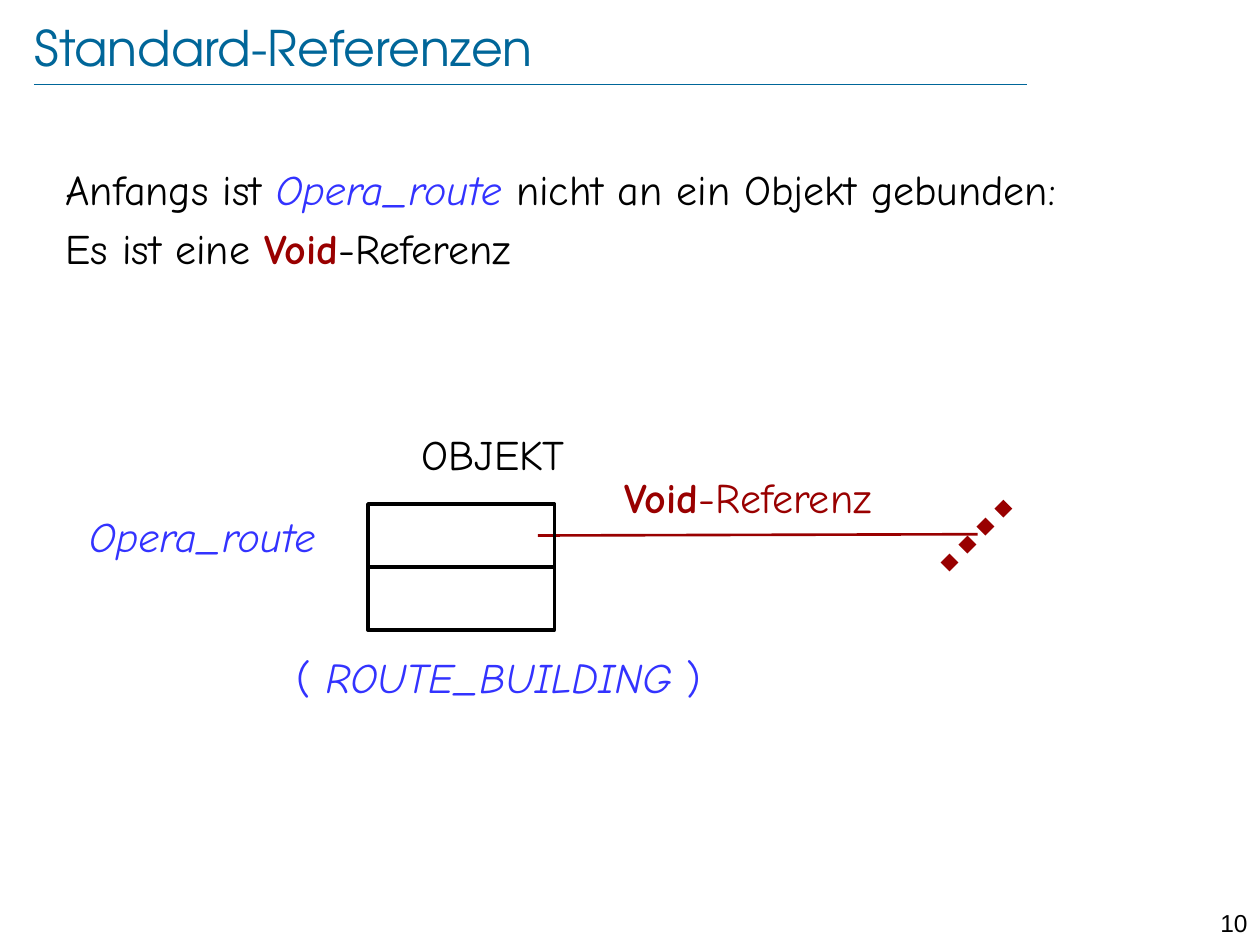
from lxml import etree
from pptx import Presentation
from pptx.dml.color import RGBColor
from pptx.enum.dml import MSO_LINE
from pptx.enum.shapes import MSO_CONNECTOR, MSO_SHAPE
from pptx.enum.text import MSO_ANCHOR, MSO_AUTO_SIZE, PP_ALIGN
from pptx.oxml.ns import qn
from pptx.util import Pt

STRAIGHT = MSO_CONNECTOR.STRAIGHT
RECTANGLE = MSO_SHAPE.RECTANGLE
DOTTED = MSO_LINE.ROUND_DOT
MIDDLE = MSO_ANCHOR.MIDDLE
NO_FIT = MSO_AUTO_SIZE.NONE
LEFT, CENTER, RIGHT = PP_ALIGN.LEFT, PP_ALIGN.CENTER, PP_ALIGN.RIGHT

PX = 9144  # EMU per px, 100 px to the inch
COLORS = {"title": "006699", "text": "000000", "code": "3333FF", "void": "990000"}
TITLE_FONT, BODY_FONT, NUMBER_FONT = "TeX Gyre Adventor", "Comic Neue", "Arial"


def add_spans(para, spans, font=BODY_FONT, size=24):
    """Fill a paragraph with spans of (text, color name, style attributes)."""
    for text, color, *styles in spans:
        span = para.add_run()
        span.text = text
        formats = {"name": font, "size": Pt(size), "bold": False, "italic": False}
        formats.update({style: True for style in styles})
        for name, value in formats.items():
            setattr(span.font, name, value)
        span.font.color.rgb = RGBColor.from_string(COLORS[color])


def place(shape, left, top, width, height):
    shape.left, shape.top = left * PX, top * PX
    shape.width, shape.height = width * PX, height * PX


deck = Presentation()
deck.slide_width, deck.slide_height = 1000 * PX, 750 * PX
page = deck.slides.add_slide(deck.slide_layouts[1])

# Title
title = page.shapes.title
place(title, 27, 13, 869, 48)
frame = title.text_frame
title_format = {
    "margin_left": 0, "margin_top": 0, "margin_right": 0, "margin_bottom": 0,
    "vertical_anchor": MIDDLE, "auto_size": NO_FIT,
}
for name, value in title_format.items():
    setattr(frame, name, value)
frame.paragraphs[0].alignment = LEFT
add_spans(frame.paragraphs[0], [("Standard-Referenzen", "title")], TITLE_FONT, 28)

# Body
body = page.placeholders[1]
place(body, 42, 125, 932, 559)
body.text_frame.auto_size = NO_FIT
body_lines = [
    [("Anfangs ist ", "text"), ("Opera_route ", "code", "italic"),
     ("nicht an ein Objekt gebunden:", "text")],
    [("Es ist eine ", "text"), ("Void", "void", "bold"), ("-Referenz", "text")],
]
for index, spans in enumerate(body_lines):
    para = body.text_frame.add_paragraph() if index else body.text_frame.paragraphs[0]
    para.space_before = Pt(5 if index else 0)
    properties = para._p.get_or_add_pPr()
    properties.set("marL", "0")
    properties.set("indent", "0")
    etree.SubElement(properties, qn("a:buNone"))
    add_spans(para, spans)

# Title rule, void reference and its dotted end
lines = [
    (27, 67, 815, 67, "title", 0.25, None),
    (427, 425, 776, 424, "void", 1.5, None),
    (750, 450, 800, 400, "void", 7.25, DOTTED),
]
for x1, y1, x2, y2, color, weight, dash in lines:
    line = page.shapes.add_connector(STRAIGHT, x1 * PX, y1 * PX, x2 * PX, y2 * PX)
    line.line.color.rgb = RGBColor.from_string(COLORS[color])
    line.line.width = Pt(weight)
    if dash:
        line.line.dash_style = dash
    etree.SubElement(line._element.spPr, qn("a:effectLst"))

# Object with two fields
for row in range(2):
    field = page.shapes.add_shape(RECTANGLE, 292 * PX, (400 + 50 * row) * PX, 148 * PX, 50 * PX)
    field.shadow.inherit = False
    field.fill.background()
    field.line.color.rgb = RGBColor.from_string(COLORS["text"])
    field.line.width = Pt(2)

# Labels and page number
labels = [
    ((325, 335, 533, 50), LEFT, [("OBJEKT", "text")], BODY_FONT, 24),
    ((61, 400, 231, 50), LEFT, [("Opera_route", "code", "italic")], BODY_FONT, 24),
    ((486, 369, 262, 50), LEFT,
     [("Void", "void", "bold"), ("-Referenz", "void")], BODY_FONT, 24),
    ((151, 512, 490, 50), CENTER,
     [("( ", "code"), ("ROUTE_BUILDING ", "code", "italic"), (")", "code")], BODY_FONT, 24),
    ((945, 716, 55, 24), RIGHT, [("10", "text")], NUMBER_FONT, 14),
]
for area, alignment, spans, font, size in labels:
    box = page.shapes.add_textbox(*(length * PX for length in area))
    box.text_frame.word_wrap = True
    para = box.text_frame.paragraphs[0]
    para.alignment = alignment
    add_spans(para, spans, font, size)

deck.save("out.pptx")
